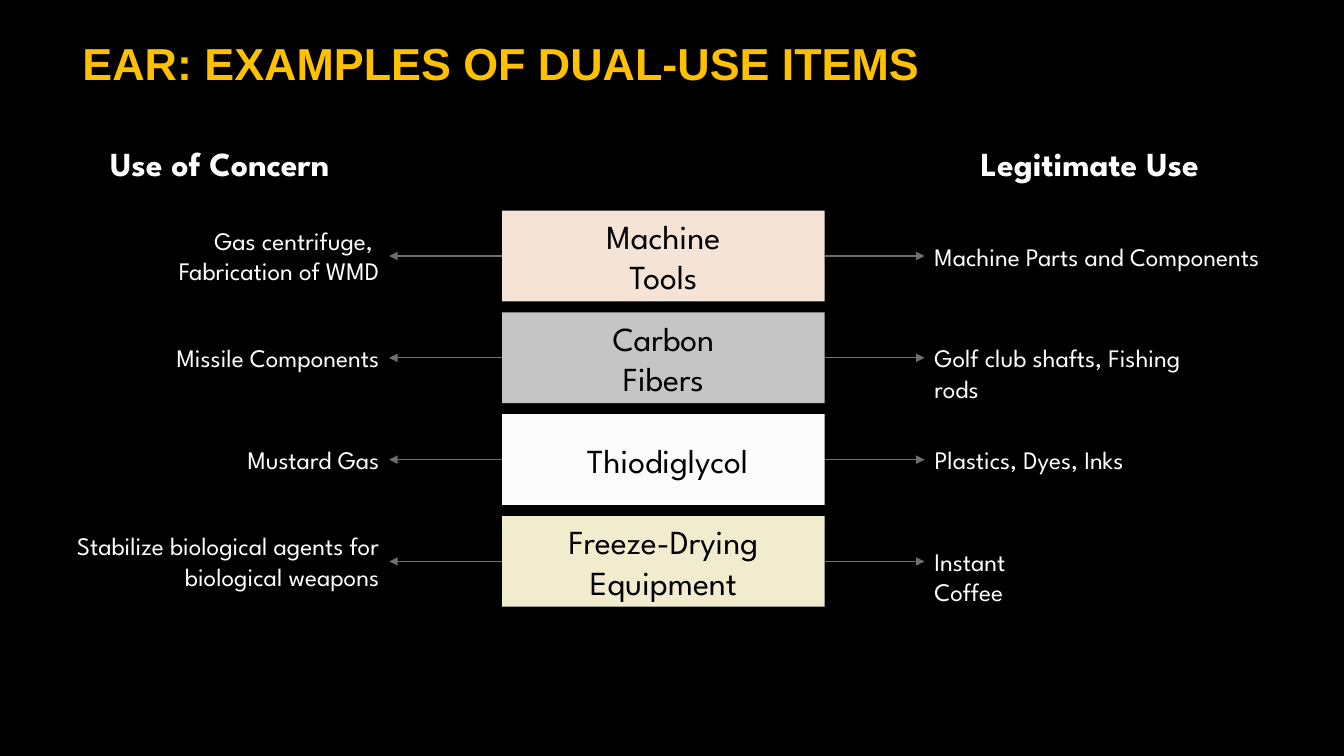
import pptx
import pptx.util
import pptx.dml.color
import pptx.enum.shapes
import pptx.enum.text
import pptx.oxml.ns
from lxml import etree

COLORS = {
    "background": "000000", "title": "FFC000", "text": "FFFFFF", "item_text": "000000",
    "arrow": "6F6F6F", "peach": "F5E3D6", "gray": "C5C5C5", "white": "FBFBFB",
    "cream": "F1ECCE",
}
COLUMNS, ROWS = 133.3, 75
CELL = pptx.util.Inches(0.1)
BODY_FONT = "League Spartan"
LINE_ROWS, PAD_ROWS = 3.1, 0.9
ALIGN = pptx.enum.text.PP_ALIGN
ANCHOR = pptx.enum.text.MSO_ANCHOR

ITEMS = [
    ("Machine\vTools", "peach", "Gas centrifuge, \nFabrication of WMD", 2,
     "Machine Parts and Components", 35.4),
    ("Carbon\vFibers", "gray", "Missile Components", 1,
     "Golf club shafts, Fishing rods", 31.3),
    (" Thiodiglycol", "white", "Mustard Gas", 1, "Plastics, Dyes, Inks", 20.9),
    ("Freeze-Drying Equipment", "cream",
     "Stabilize biological agents for biological weapons", 2, "Instant Coffee", 16.3),
]


def rgb(name):
    return pptx.dml.color.RGBColor.from_string(COLORS[name])


def emu(box):
    return [round(v * CELL) for v in box]


def write(sp, text, size, color, align, anchor=ANCHOR.TOP, font=BODY_FONT, bold=False):
    tf = sp.text_frame
    tf.word_wrap = True
    tf.vertical_anchor = anchor
    tf.text = text
    for p in tf.paragraphs:
        p.alignment = align
        p.font.name = font
        p.font.size = pptx.util.Pt(size)
        p.font.bold = bold
        p.font.color.rgb = rgb(color)


def add_text(s, box, *args, **kwargs):
    sp = s.shapes.add_textbox(*emu(box))
    write(sp, *args, **kwargs)
    return sp


def add_item(s, box, text, fill):
    sp = s.shapes.add_shape(pptx.enum.shapes.MSO_SHAPE.RECTANGLE, *emu(box))
    sp.shadow.inherit = False
    sp.fill.solid()
    sp.fill.fore_color.rgb = rgb(fill)
    sp.line.fill.background()
    write(sp, text, 24, "item_text", ALIGN.CENTER, ANCHOR.MIDDLE)
    return sp


def add_arrow(s, item, item_side, label, label_side):
    c = s.shapes.add_connector(pptx.enum.shapes.MSO_CONNECTOR.STRAIGHT, 0, 0, 0, 0)
    c.begin_connect(item, item_side)
    c.end_connect(label, label_side)
    c.line.color.rgb = rgb("arrow")
    c.line.width = pptx.util.Pt(0.75)
    qn = pptx.oxml.ns.qn
    etree.SubElement(c.line._get_or_add_ln(), qn("a:tailEnd"), type="triangle")
    etree.SubElement(c._element.spPr, qn("a:effectLst"))


def add_title(s, box):
    add_text(s, box, "EAR: EXAMPLES OF DUAL-USE ITEMS", 32, "title", ALIGN.LEFT,
             ANCHOR.MIDDLE, font="Arial", bold=True)


def add_headings(s, box):
    left, top, width, height = box
    heading_width = 28.6
    for text, x in (("Use of Concern", left),
                    ("Legitimate Use", left + width - heading_width)):
        add_text(s, (x, top, heading_width, height), text, 24, "text",
                 ALIGN.CENTER, bold=True)


def add_item_row(s, box, item, fill, concern, concern_lines, use, use_width):
    left, top, width, height = box
    middle = top + height / 2
    concern_width, item_left, item_width, use_left = 33.6, 44.8, 32, 86.7
    concern_height = LINE_ROWS * concern_lines + PAD_ROWS
    use_height = LINE_ROWS + PAD_ROWS

    block = add_item(s, (left + item_left, top, item_width, height), item, fill)
    concern_label = add_text(
        s, (left, middle - concern_height / 2, concern_width, concern_height),
        concern, 18, "text", ALIGN.RIGHT)
    use_label = add_text(
        s, (left + use_left, middle - use_height / 2, use_width, use_height),
        use, 18, "text", ALIGN.LEFT)
    add_arrow(s, block, 1, concern_label, 3)
    add_arrow(s, block, 3, use_label, 1)


def add_items(s, box):
    left, top, width, height = box
    gap = 1.1
    row_height = (height - gap * (len(ITEMS) - 1)) / len(ITEMS)
    for i, item in enumerate(ITEMS):
        row_top = top + i * (row_height + gap)
        add_item_row(s, (left, row_top, width, row_height), *item)


def main():
    prs = pptx.Presentation()
    prs.slide_width, prs.slide_height = emu((COLUMNS, ROWS))
    s = prs.slides.add_slide(prs.slide_layouts[6])
    s.background.fill.solid()
    s.background.fill.fore_color.rgb = rgb("background")
    add_title(s, (7.2, 4.5, 106.6, 3.5))
    add_headings(s, (7.5, 13.7, 114.9, 5))
    add_items(s, (5, 20.9, 122.1, 39.3))
    prs.save("out.pptx")


if __name__ == "__main__":
    main()
